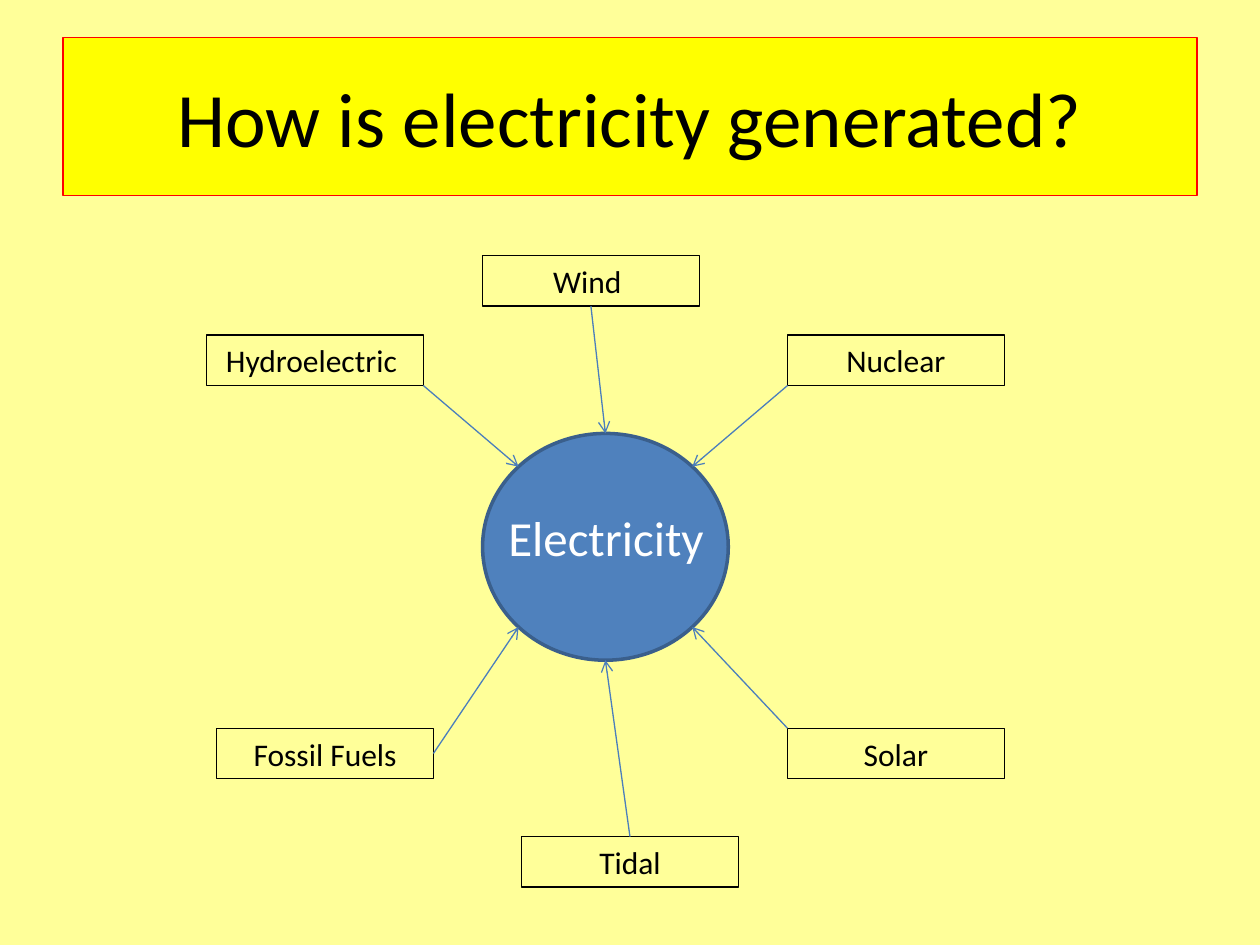
"""Build a slide showing the energy sources that generate electricity."""
from math import cos, radians, sin

from lxml import etree
from pptx import Presentation
from pptx.dml.color import RGBColor
from pptx.enum import shapes, text
from pptx.oxml import ns
from pptx.util import Inches, Pt

TITLE = "How is electricity generated?"
HUB = "Electricity"
SOURCES = [
    # name, left, top, arrow start as fraction of box, joined side, hub angle
    ("Hydroelectric ", 1.64, 2.66, (1, 1), None, 225),
    ("Wind ", 3.83, 2.03, (0.5, 1), 2, 270),
    ("Nuclear", 6.25, 2.66, (0, 1), None, 315),
    ("Solar", 6.25, 5.78, (0, 0), None, 45),
    ("Tidal", 4.14, 6.64, (0.5, 0), 0, 90),
    ("Fossil Fuels", 1.72, 5.78, (1, 0.5), 3, 135),
]
BOX_WIDTH, BOX_HEIGHT = 1.72, 0.4
HUB_LEFT, HUB_TOP, HUB_WIDTH, HUB_HEIGHT = 3.83, 3.44, 1.95, 1.8


def color(value):
    return RGBColor.from_string(value)


def set_fill(item, value):
    item.fill.solid()
    item.fill.fore_color.rgb = color(value)


def set_line(shape, value, width=0.75):
    shape.line.color.rgb = color(value)
    shape.line.width = Pt(width)


def place(shape, *box):
    shape.left, shape.top, shape.width, shape.height = map(Inches, box)


def write(shape, words, size, value="000000"):
    frame = shape.text_frame
    frame.word_wrap = True
    frame.vertical_anchor = text.MSO_ANCHOR.MIDDLE
    paragraph = frame.paragraphs[0]
    paragraph.text = words
    paragraph.alignment = text.PP_ALIGN.CENTER
    paragraph.font.name = "Calibri"
    paragraph.font.size = Pt(size)
    paragraph.font.color.rgb = color(value)


def add_title(slide):
    title = slide.shapes.title
    place(title, 0.5, 0.3, 9, 1.25)
    set_fill(title, "FFFF00")
    set_line(title, "FF0000")
    write(title, TITLE, 44)


def add_hub(slide):
    hub = slide.shapes.add_shape(
        shapes.MSO_SHAPE.OVAL,
        *map(Inches, (HUB_LEFT, HUB_TOP, HUB_WIDTH, HUB_HEIGHT)))
    hub.shadow.inherit = False
    set_fill(hub, "4F81BD")
    set_line(hub, "3A5F8C", 2)
    label = slide.shapes.add_textbox(*map(Inches, (3.91, 3.98, 1.8, 0.57)))
    write(label, HUB, 28, "FFFFFF")


def add_source(slide, name, left, top, start, side, angle):
    box = slide.shapes.add_textbox(
        *map(Inches, (left, top, BOX_WIDTH, BOX_HEIGHT)))
    set_line(box, "000000")
    write(box, name, 18)

    begin = left + start[0] * BOX_WIDTH, top + start[1] * BOX_HEIGHT
    end = (HUB_LEFT + HUB_WIDTH / 2 * (1 + cos(radians(angle))),
           HUB_TOP + HUB_HEIGHT / 2 * (1 + sin(radians(angle))))
    arrow = slide.shapes.add_connector(
        shapes.MSO_CONNECTOR.STRAIGHT, *map(Inches, begin + end))
    if side is not None:
        arrow.begin_connect(box, side)
    set_line(arrow, "4B7EBC")
    etree.SubElement(arrow.line._get_or_add_ln(), ns.qn("a:tailEnd"), type="arrow")
    etree.SubElement(arrow._element.spPr, ns.qn("a:effectLst"))


def main():
    presentation = Presentation()
    presentation.slide_width, presentation.slide_height = Inches(10), Inches(7.5)
    slide = presentation.slides.add_slide(presentation.slide_layouts[5])
    set_fill(slide.background, "FFFF99")
    add_title(slide)
    add_hub(slide)
    for source in SOURCES:
        add_source(slide, *source)
    presentation.save("out.pptx")


if __name__ == "__main__":
    main()
